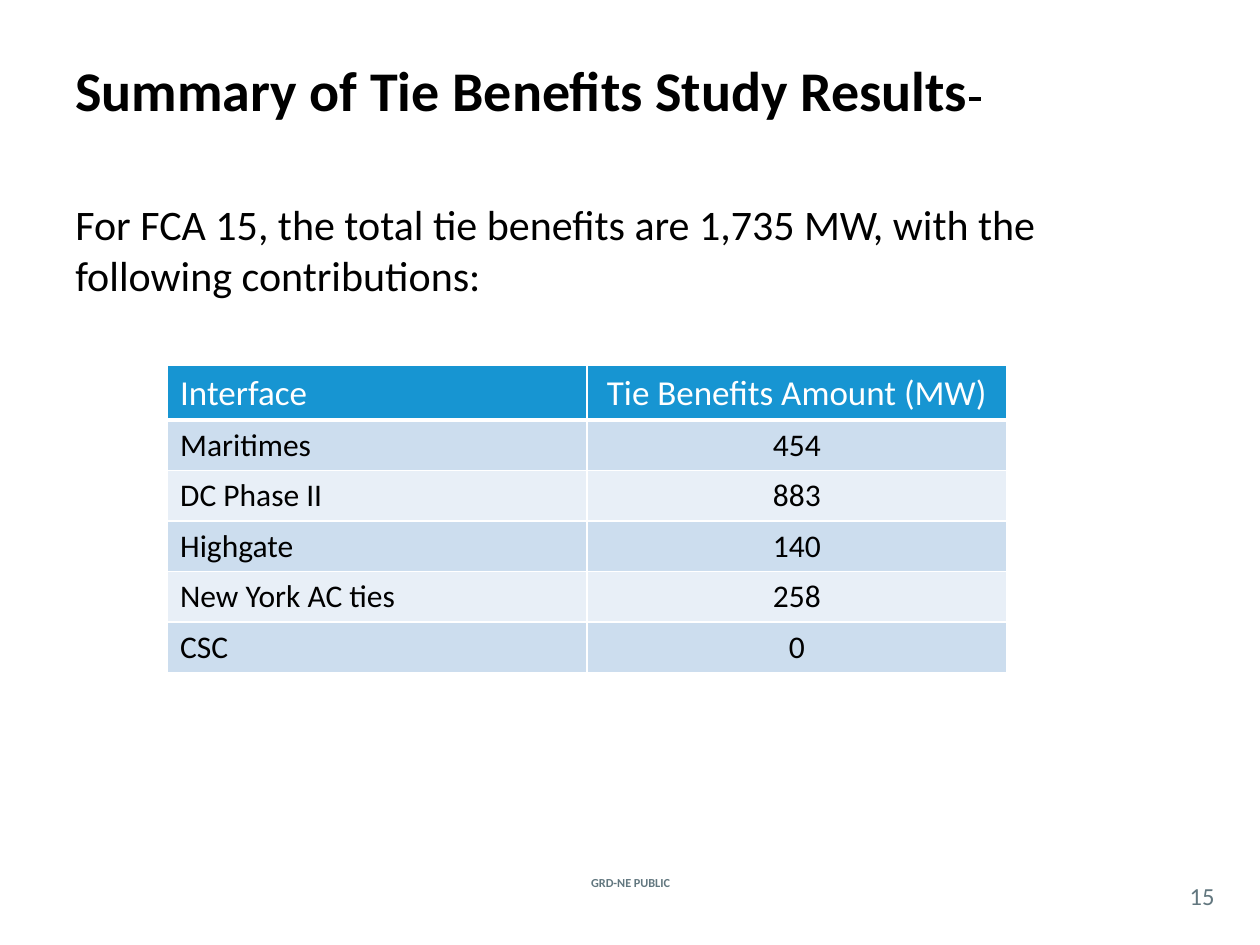
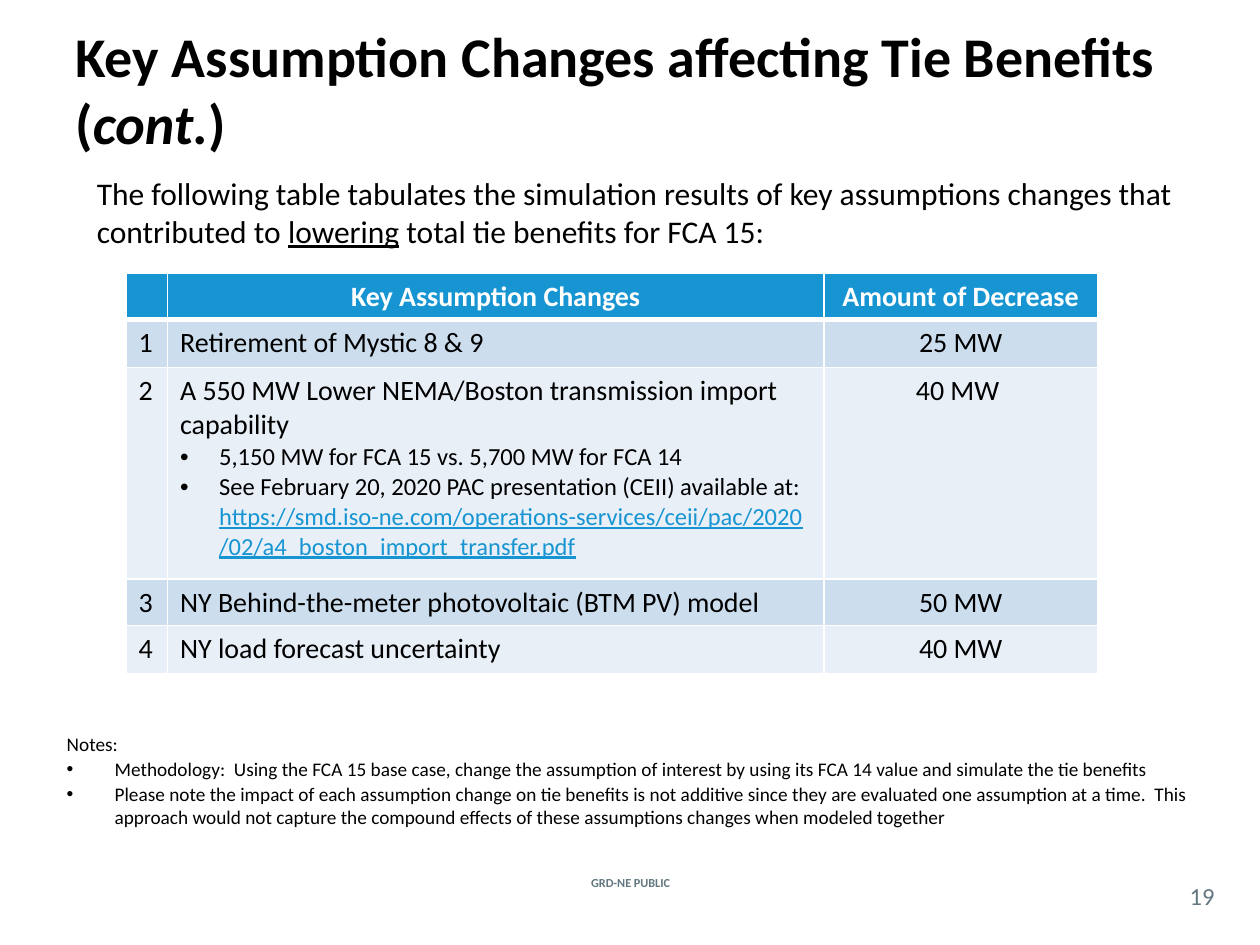
"""Build two slides on tie benefits results and assumption changes."""
import lxml.etree
import pptx
import pptx.dml.color
import pptx.enum.text
import pptx.oxml.ns
import pptx.util

Inches, Pt = pptx.util.Inches, pptx.util.Pt
RGBColor = pptx.dml.color.RGBColor
ALIGN = pptx.enum.text.PP_ALIGN
ANCHOR = pptx.enum.text.MSO_ANCHOR
qn = pptx.oxml.ns.qn

BLACK = RGBColor(0, 0, 0)
WHITE = RGBColor(255, 255, 255)
SLATE = RGBColor(0x62, 0x77, 0x7F)
BLUE = RGBColor(0x17, 0x95, 0xD2)
BANDS = [RGBColor(0xCC, 0xDD, 0xEE), RGBColor(0xE8, 0xEF, 0xF7)]
FONT = "Calibri"
FOOTER = "GRD-NE PUBLIC"

SLIDES = [
    {
        "number": "15",
        "title": ["Summary of Tie Benefits Study Results", (" ", "strike")],
        "body": ["For FCA 15, the total tie benefits are 1,735 MW, "
                 "with the following contributions:"],
        "place": (0.5, 1.53, 9, 1.2),
        "size": 24,
        "table": {
            "at": (1.33, 2.9),
            "cols": [3.33, 3.33],
            "heights": [0.38, 0.35, 0.35, 0.35, 0.35, 0.38],
            "sizes": (20, 18),
            "bold": False,
            "heads": [ALIGN.LEFT, ALIGN.CENTER],
            "aligns": [ALIGN.LEFT, ALIGN.CENTER],
            "rows": [
                ("Interface", "Tie Benefits Amount (MW)"),
                ("Maritimes", "454"),
                ("DC Phase II", "883"),
                ("Highgate", "140"),
                ("New York AC ties", "258"),
                ("CSC", "0"),
            ],
        },
    },
    {
        "number": "19",
        "title": ["Key Assumption Changes affecting Tie Benefits", "\n",
                  "(", ("cont.", "italic"), ")"],
        "body": ["The following table tabulates the simulation results of key "
                 "assumptions changes that contributed to ",
                 ("lowering", "under"), " total tie benefits for FCA 15:"],
        "place": (0.67, 1.33, 8.83, 0.8),
        "size": 18,
        "table": {
            "at": (1, 2.17),
            "cols": [0.33, 5.21, 2.17],
            "heights": [0.34, 0.38, 1.68, 0.34, 0.38],
            "sizes": (16, 16),
            "bold": True,
            "heads": [ALIGN.CENTER] * 3,
            "aligns": [ALIGN.LEFT, ALIGN.LEFT, ALIGN.CENTER],
            "rows": [
                ("", "Key Assumption Changes", "Amount of Decrease"),
                ("1", "Retirement of Mystic 8 & 9", "25 MW"),
                ("2", "A 550 MW Lower NEMA/Boston transmission import capability",
                 "40 MW "),
                ("3", "NY Behind-the-meter photovoltaic (BTM PV) model", "50 MW"),
                ("4", "NY load forecast uncertainty", "40 MW"),
            ],
            "points": {(2, 1): [
                ["5,150 MW for FCA 15 vs. 5,700 MW for FCA 14"],
                ["See February 20, 2020 PAC presentation (CEII) available at: ",
                 ("https://smd.iso-ne.com/operations-services/ceii/pac/2020/02/"
                  "a4_boston_import_transfer.pdf", "link")],
            ]},
        },
        "notes": [
            ["Methodology:  Using the FCA 15 base case, change the assumption of "
             "interest by using its FCA 14 value and simulate the tie benefits"],
            ["Please note the impact of each assumption change on tie benefits is "
             "not additive since they are evaluated one assumption at a time.  "
             "This approach would not capture the compound effects of these "
             "assumptions changes when modeled together"],
        ],
    },
]


def write(para, parts, size, color=BLACK, bold=False, align=ALIGN.LEFT):
    """Fill a paragraph with plain and styled parts."""
    para.alignment = align
    for part in parts:
        if part == "\n":
            para.add_line_break()
            continue
        text, style = part if isinstance(part, tuple) else (part, "")
        run = para.add_run()
        run.text = text
        font = run.font
        font.name, font.size, font.bold = FONT, Pt(size), bold
        font.italic = style == "italic"
        font.underline = style in ("under", "link")
        font.color.rgb = BLUE if style == "link" else color
        if style == "strike":
            run._r.get_or_add_rPr().set("strike", "sngStrike")


def points(frame, items, size, indent, gap=0):
    """Add bulleted paragraphs to a text frame."""
    for parts in items:
        para = frame.add_paragraph()
        props = para._p.get_or_add_pPr()
        props.set("marL", str(Inches(indent)))
        props.set("indent", str(-Inches(indent)))
        para.space_before = Pt(gap)
        face = lxml.etree.SubElement(props, qn("a:buFont"))
        face.set("typeface", "Arial")
        lxml.etree.SubElement(props, qn("a:buChar")).set("char", "•")
        write(para, parts, size)


def box(slide, place, parts, size, anchor=ANCHOR.MIDDLE, inset=None, **look):
    """Add a wrapped text box and return its frame."""
    frame = slide.shapes.add_textbox(*map(Inches, place)).text_frame
    frame.word_wrap = True
    frame.vertical_anchor = anchor
    if inset is not None:
        frame.margin_left = frame.margin_right = Inches(inset[0])
        frame.margin_top = frame.margin_bottom = Inches(inset[1])
    write(frame.paragraphs[0], parts, size, **look)
    return frame


def edge(cell, side, width):
    """Draw one white cell border."""
    line = lxml.etree.SubElement(cell._tc.get_or_add_tcPr(), qn("a:ln" + side))
    line.set("w", str(Pt(width)))
    fill = lxml.etree.SubElement(line, qn("a:solidFill"))
    lxml.etree.SubElement(fill, qn("a:srgbClr")).set("val", str(WHITE))


def grid(slide, data):
    """Add a table with a blue head and banded rows."""
    rows, cols, heights = data["rows"], data["cols"], data["heights"]
    size = (sum(cols), sum(heights))
    table = slide.shapes.add_table(
        len(rows), len(cols), *map(Inches, data["at"] + size)).table
    for col, width in zip(table.columns, cols):
        col.width = Inches(width)
    for row, height in zip(table.rows, heights):
        row.height = Inches(height)
    for r, row in enumerate(rows):
        head = r == 0
        size = data["sizes"][0 if head else 1]
        for c, text in enumerate(row):
            cell = table.cell(r, c)
            for side in "LRTB":
                thick = (r, side) in ((0, "B"), (1, "T"))
                edge(cell, side, 3 if thick else 1)
            cell.fill.solid()
            cell.fill.fore_color.rgb = BLUE if head else BANDS[(r - 1) % 2]
            para = cell.text_frame.paragraphs[0]
            if text:
                write(para, [text], size, WHITE if head else BLACK,
                      head and data["bold"], data["heads" if head else "aligns"][c])
            else:
                end = lxml.etree.SubElement(para._p, qn("a:endParaRPr"))
                end.set("sz", str(size * 100))
            points(cell.text_frame, data.get("points", {}).get((r, c), []), 14, 0.31)


def main():
    """Build and save the deck."""
    deck = pptx.Presentation()
    deck.slide_width, deck.slide_height = Inches(10), Inches(7.5)
    for data in SLIDES:
        slide = deck.slides.add_slide(deck.slide_layouts[6])
        box(slide, (4.27, 6.92, 1.47, 0.17), [FOOTER], 7,
            color=SLATE, bold=True, align=ALIGN.CENTER)
        box(slide, (9.33, 6.96, 0.42, 0.29), [data["number"]], 14,
            inset=(0, 0), color=SLATE, align=ALIGN.CENTER)
        box(slide, (0.5, 0.08, 9, 1.25), data["title"], 32, bold=True)
        box(slide, data["place"], data["body"], data["size"], ANCHOR.TOP)
        grid(slide, data["table"])
        if "notes" in data:
            frame = box(slide, (0.42, 5.75, 9.33, 0.88), ["Notes:"], 11,
                        ANCHOR.TOP, (0.11, 0.06))
            points(frame, data["notes"], 11, 0.38, 1.1)
    deck.save("out.pptx")


if __name__ == "__main__":
    main()
